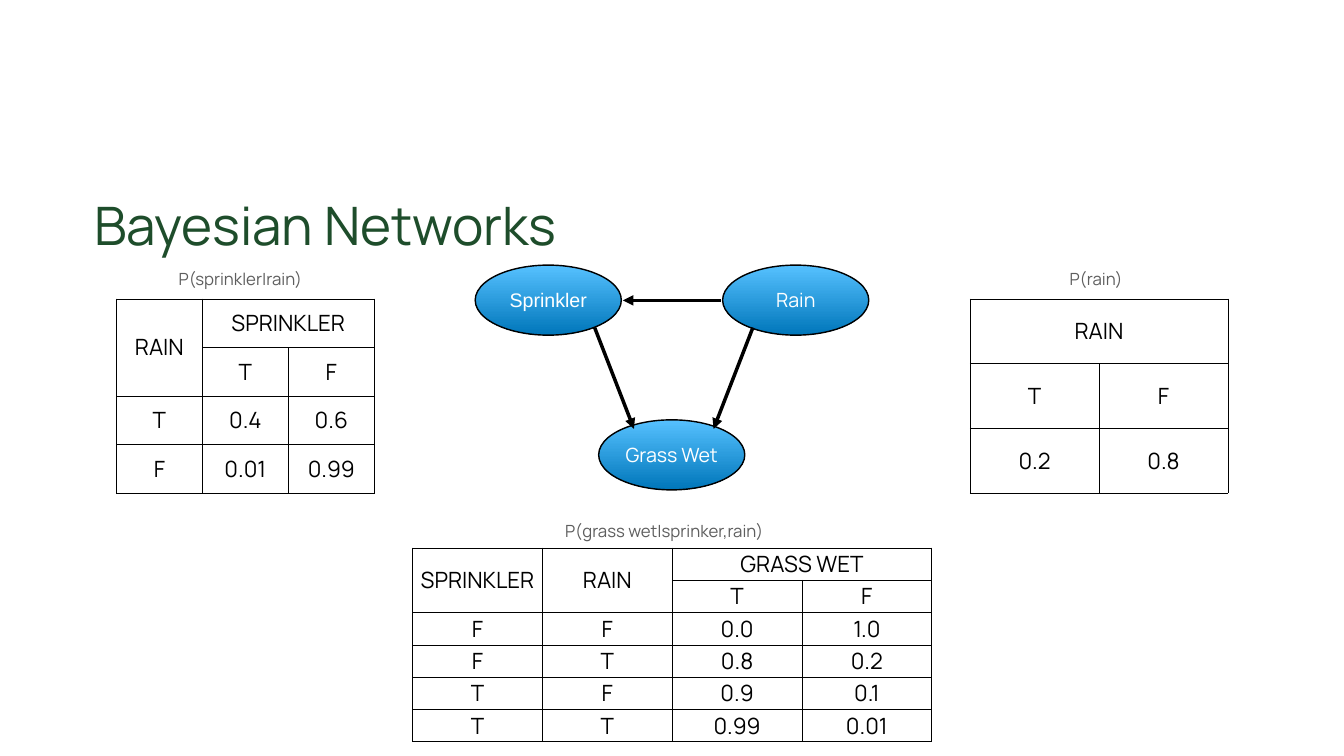
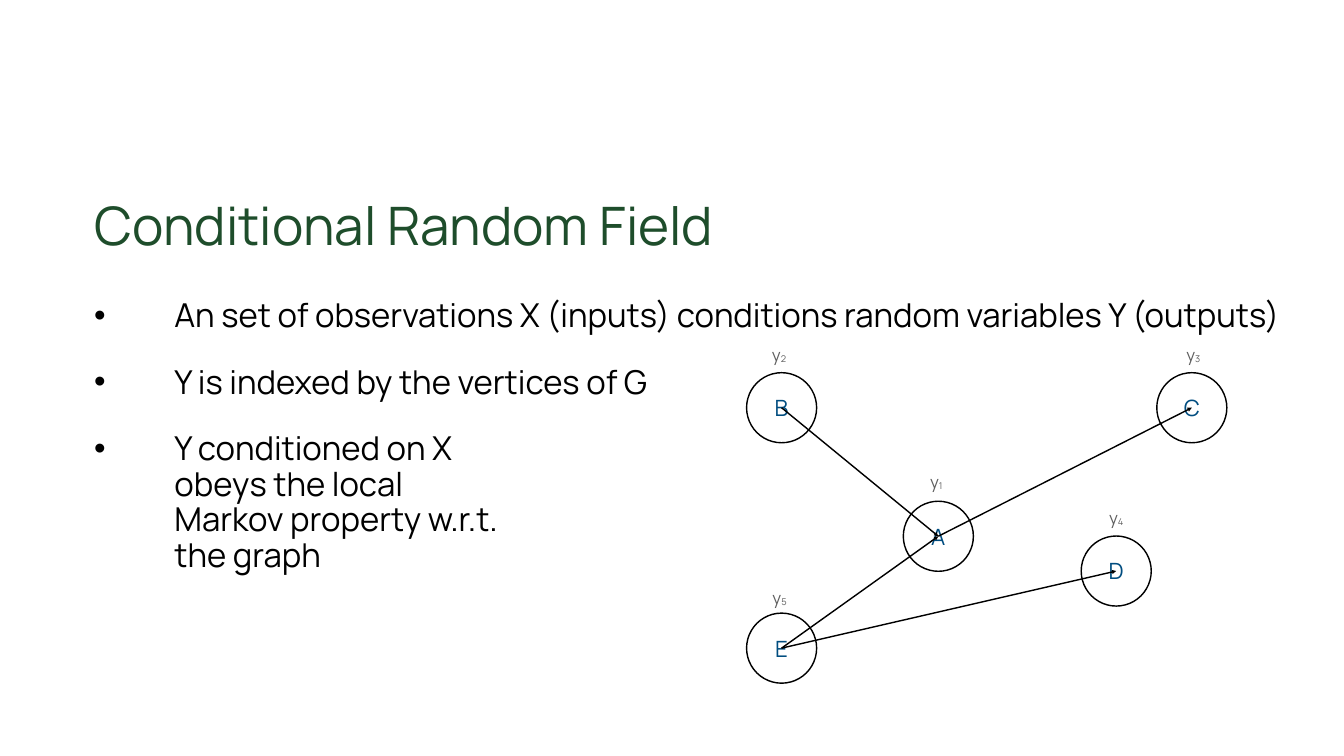
from lxml import etree
from pptx import Presentation
from pptx.dml.color import RGBColor
from pptx.enum import shapes, text
from pptx.oxml import ns
from pptx.util import Inches, Pt

COLORS = {
    "title": "1E4D2B",
    "ink": "000000",
    "caption": "5E5E5E",
    "node_top": "56C1FF",
    "node_bottom": "0076BA",
    "node_text": "FFFFFF",
    "vertex_text": "004D80",
}
FONT = "Manrope"
INSET = 0.06
CELL_INSET = 0.01  # above and below cell text, so that low rows keep their height
CAPTION_HEIGHT = 0.56
VERTEX_SIZE = 1.39


def color(name):
    return RGBColor.from_string(COLORS[name])


def add_element(parent, tag, **attributes):
    return etree.SubElement(parent, ns.qn(tag), attributes)


class Deck:
    """Holds the shared style and the current slide."""

    def __init__(self):
        self.presentation = Presentation()
        self.presentation.slide_width = Inches(26.67)
        self.presentation.slide_height = Inches(15)
        self.slide = None
        self.canvas = None  # shape collection that receives new shapes

    def new_slide(self, title, layout):
        layouts = self.presentation.slide_layouts
        self.slide = self.presentation.slides.add_slide(layouts[layout])
        self.canvas = self.slide.shapes
        placeholder = self.slide.shapes.title
        self.place(placeholder, 1.77, 3.71, 23.92, 1.68)
        placeholder.text_frame.text = title
        paragraph = placeholder.text_frame.paragraphs[0]
        paragraph.alignment = text.PP_ALIGN.LEFT
        self.style_font(paragraph.font, 75.7, "title")

    def open_group(self):
        self.canvas = self.slide.shapes.add_group_shape().shapes

    def close_group(self):
        self.canvas = self.slide.shapes

    def place(self, placeholder, left, top, width, height):
        placeholder.left, placeholder.top = Inches(left), Inches(top)
        placeholder.width, placeholder.height = Inches(width), Inches(height)
        frame = placeholder.text_frame
        frame.auto_size = text.MSO_AUTO_SIZE.NONE
        frame.vertical_anchor = text.MSO_ANCHOR.TOP
        self.set_margins(frame, 0.1, 0.1)

    def set_margins(self, box, horizontal, vertical):
        box.margin_left = box.margin_right = Inches(horizontal)
        box.margin_top = box.margin_bottom = Inches(vertical)

    def style_font(self, font, size, color_name, name=FONT):
        font.name = name
        font.size = Pt(size)
        font.bold = False
        font.color.rgb = color(color_name)

    def center_text(self, box, content, size, color_name, name=FONT, vertical_inset=INSET):
        """Fill a text frame or table cell with one centred paragraph."""
        self.set_margins(box, INSET, vertical_inset)
        box.vertical_anchor = text.MSO_ANCHOR.MIDDLE
        frame = getattr(box, "text_frame", box)
        paragraph = frame.paragraphs[0]
        paragraph.add_run().text = content
        paragraph.alignment = text.PP_ALIGN.CENTER
        self.style_font(paragraph.font, size, color_name, name)
        return paragraph

    def bullets(self, items):
        body = self.slide.placeholders[1]
        self.place(body, 1.77, 5.84, 23.92, 7.78)
        frame = body.text_frame
        for index, item in enumerate(items):
            paragraph = frame.add_paragraph() if index else frame.paragraphs[0]
            paragraph.text = item
            paragraph.line_spacing = 0.9
            paragraph.space_before = Pt(44 if index else 0)
            properties = paragraph._p.get_or_add_pPr()
            properties.set("marL", str(Inches(1.59)))
            properties.set("indent", str(-Inches(1.59)))
            add_element(properties, "a:buFont", typeface="Arial")
            add_element(properties, "a:buChar", char="•")
            self.style_font(paragraph.font, 47, "ink")

    def ellipse(self, label, left, top, width, height, size, color_name,
                gradient=None, font_name=FONT):
        shape = self.canvas.add_shape(
            shapes.MSO_SHAPE.OVAL, Inches(left), Inches(top), Inches(width), Inches(height))
        shape.shadow.inherit = False
        shape.line.color.rgb = color("ink")
        shape.line.width = Pt(2)
        if gradient:
            shape.fill.gradient()
            shape.fill.gradient_angle = 270
            for stop, name in zip(shape.fill.gradient_stops, gradient):
                stop.color.rgb = color(name)
        else:
            shape.fill.background()
        shape.text_frame.word_wrap = True
        self.center_text(shape.text_frame, label, size, color_name, font_name)

    def arrow(self, start, end, width, arrow_end):
        connector = self.canvas.add_connector(
            shapes.MSO_CONNECTOR.STRAIGHT, *(Inches(value) for value in (*start, *end)))
        connector.line.color.rgb = color("ink")
        connector.line.width = Pt(width)
        add_element(connector.line._get_or_add_ln(), arrow_end, type="triangle")
        add_element(connector._element.spPr, "a:effectLst")

    def caption(self, content, center_x, center_y, width, subscript=None):
        box = self.canvas.add_textbox(
            Inches(center_x - width / 2), Inches(center_y - CAPTION_HEIGHT / 2),
            Inches(width), Inches(CAPTION_HEIGHT))
        box.text_frame.word_wrap = False
        box.text_frame.auto_size = text.MSO_AUTO_SIZE.SHAPE_TO_FIT_TEXT
        paragraph = self.center_text(box.text_frame, content, 24, "caption")
        if subscript:
            run = paragraph.add_run()
            run.text = subscript
            run.font.size = Pt(23)
            run.font._element.set("baseline", "-6000")

    def table(self, rows, merges, left, top, width, height):
        """Draw a bordered table; merges lists (row, column, last row, last column)."""
        row_count, column_count = len(rows), len(rows[0])
        table = self.canvas.add_table(
            row_count, column_count, Inches(left), Inches(top),
            Inches(width), Inches(height)).table
        table.first_row = table.horz_banding = False
        for row, values in zip(table.rows, rows):
            row.height = Inches(height / row_count)
            for cell, value in zip(row.cells, values):
                self.cell_border(cell)
                cell.fill.background()
                if value:
                    self.center_text(cell, value, 32, "ink", vertical_inset=CELL_INSET)
        for row, column, last_row, last_column in merges:
            table.cell(row, column).merge(table.cell(last_row, last_column))

    def cell_border(self, cell):
        properties = cell._tc.get_or_add_tcPr()
        for side in ("a:lnL", "a:lnR", "a:lnT", "a:lnB"):
            line = add_element(properties, side, w=str(Pt(1)))
            fill = add_element(line, "a:solidFill")
            add_element(fill, "a:srgbClr", val=COLORS["ink"])


def bayesian_networks(deck):
    deck.new_slide("Bayesian Networks", layout=5)

    # Network nodes and their dependencies
    for label, left, top, font_name in (
            ("Sprinkler", 9.43, 5.26, "Arial"),
            ("Rain", 14.34, 5.26, FONT),
            ("Grass Wet", 11.88, 8.33, FONT)):
        deck.ellipse(label, left, top, 2.9, 1.39, 28, "node_text",
                     ("node_top", "node_bottom"), font_name)
    for start, end in (
            ((14.31, 5.96), (12.36, 5.96)),
            ((11.8, 6.5), (12.58, 8.51)),
            ((14.94, 6.5), (14.16, 8.51))):
        deck.arrow(start, end, 5, "a:tailEnd")

    # Probability tables
    sprinkler_rows = [
        ["RAIN", "SPRINKLER", ""],
        ["", "T", "F"],
        ["T", "0.4", "0.6"],
        ["F", "0.01", "0.99"],
    ]
    rain_rows = [["RAIN", ""], ["T", "F"], ["0.2", "0.8"]]
    grass_rows = [
        ["SPRINKLER", "RAIN", "GRASS WET", ""],
        ["", "", "T", "F"],
        ["F", "F", "0.0", "1.0"],
        ["F", "T", "0.8", "0.2"],
        ["T", "F", "0.9", "0.1"],
        ["T", "T", "0.99", "0.01"],
    ]
    deck.table(sprinkler_rows, [(0, 0, 1, 0), (0, 1, 0, 2)], 2.31, 5.93, 5.12, 3.85)
    deck.table(rain_rows, [(0, 0, 0, 1)], 19.25, 5.93, 5.12, 3.85)
    deck.table(grass_rows, [(0, 0, 1, 0), (0, 1, 1, 1), (0, 2, 0, 3)],
               8.19, 10.87, 10.3, 3.85)

    # Table captions
    deck.caption("P(sprinkler|rain)", 4.77, 5.54, 2.77)
    deck.caption("P(rain)", 21.75, 5.54, 1.27)
    deck.caption("P(grass wet|sprinker,rain)", 13.18, 10.54, 4.36)


def conditional_random_field(deck):
    deck.new_slide("Conditional Random Field", layout=1)
    deck.bullets([
        "An set of observations X (inputs) conditions random variables Y (outputs)",
        "Y is indexed by the vertices of G",
        "Y conditioned on X\vobeys the local\vMarkov property w.r.t.\vthe graph",
    ])

    # Graph of vertices, joined centre to centre
    vertices = {
        "A": (18.62, 10.64),
        "D": (22.15, 11.33),
        "E": (15.51, 12.86),
        "B": (15.51, 8.09),
        "C": (23.65, 8.09),
    }
    deck.open_group()
    for label, (x, y) in vertices.items():
        deck.ellipse(label, x - VERTEX_SIZE / 2, y - VERTEX_SIZE / 2,
                     VERTEX_SIZE, VERTEX_SIZE, 32, "vertex_text")
    for start, end in ("AB", "AE", "CA", "DE"):
        deck.arrow(vertices[start], vertices[end], 2, "a:headEnd")
    deck.close_group()

    # Output variable above each vertex
    for subscript, x, y in (
            ("1", 18.58, 9.56), ("2", 15.46, 7.04), ("3", 23.68, 7.04),
            ("4", 22.15, 10.28), ("5", 15.47, 11.86)):
        deck.caption("y", x, y, 0.44, subscript)


def main():
    deck = Deck()
    bayesian_networks(deck)
    conditional_random_field(deck)
    deck.presentation.save("out.pptx")


if __name__ == "__main__":
    main()
